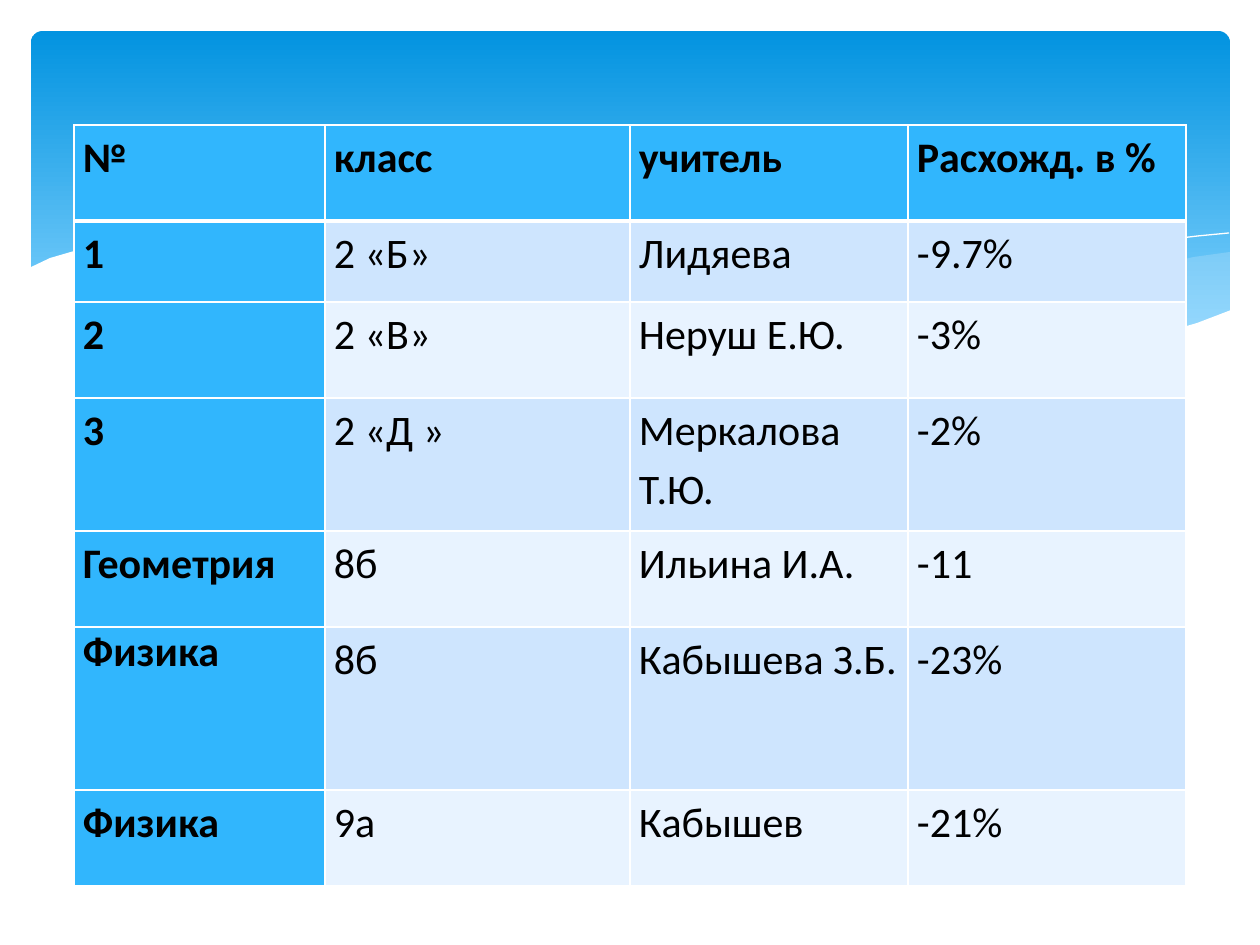
from lxml.etree import SubElement
from pptx import Presentation
from pptx.dml.color import RGBColor
from pptx.enum.shapes import MSO_SHAPE as SHAPE
from pptx.enum.text import PP_ALIGN as ALIGN
from pptx.oxml.ns import qn
from pptx.util import Pt

PX = 914400 / 126
WHITE, BLUE = "FFFFFF", "31B6FD"
BANDS = ["CEE5FE", "E8F3FF"]
rgb = RGBColor.from_string


def px(n):
    return round(n * PX)


def set_border(cell, side, width):
    ln = SubElement(cell._tc.get_or_add_tcPr(), qn(f"a:{side}"), w=str(Pt(width)))
    fill = SubElement(ln, qn("a:solidFill"))
    SubElement(fill, qn("a:srgbClr"), val=WHITE)


prs = Presentation()
prs.slide_width, prs.slide_height = px(1260), px(945)
s = prs.slides.add_slide(prs.slide_layouts[6])

# Gradient banner
banner = s.shapes.add_shape(SHAPE.ROUNDED_RECTANGLE, px(31), px(31), px(1199), px(340))
banner.adjustments[0] = 0.034
banner.shadow.inherit = False
banner.line.fill.background()
banner.fill.gradient()
banner.fill.gradient_angle = 270
for stop, (position, color) in zip(banner.fill.gradient_stops, [(0, "0293E0"), (0.9, "83D3FE")]):
    stop.position = position
    stop.color.rgb = rgb(color)

# Waves: fill colour (None for an open line), opacity in percent, points
waves = [
    ("C6E7FC", 29, [
        (1230, 252), (1194, 257), (1160, 265), (1123, 272), (1085, 281), (1014, 299),
        (949, 312), (890, 324), (833, 334), (871, 339), (922, 345), (969, 349),
        (1026, 350), (1076, 348), (1120, 343), (1160, 334), (1196, 324), (1230, 311)]),
    ("C6E7FC", 40, [
        (1125, 344), (1055, 334), (976, 320), (890, 302), (793, 280), (736, 266),
        (682, 256), (633, 247), (586, 241), (529, 236), (479, 233), (433, 234),
        (394, 237), (360, 241), (407, 247), (456, 256), (509, 266), (566, 280),
        (668, 302), (757, 321), (838, 335), (910, 345), (974, 349), (1043, 350),
        (1092, 348)]),
    (None, 100, [
        (389, 246), (413, 242), (457, 238), (524, 236), (591, 238), (672, 244),
        (733, 252), (801, 262), (876, 276), (958, 294), (1047, 316), (1143, 343)]),
    (None, 100, [
        (772, 324), (823, 310), (876, 296), (942, 281), (1016, 265), (1091, 251),
        (1147, 242), (1198, 236), (1229, 233)]),
    (WHITE, 100, [
        (1231, 310), (1197, 323), (1159, 334), (1118, 341), (1071, 347), (1019, 349),
        (959, 347), (892, 340), (816, 330), (730, 315), (634, 294), (563, 277),
        (493, 261), (428, 248), (368, 239), (315, 234), (266, 232), (203, 232),
        (150, 236), (107, 243), (74, 251), (50, 258), (29, 268), (29, 415), (1231, 415)]),
]
for color, opacity, points in waves:
    builder = s.shapes.build_freeform(*points[0], scale=PX)
    builder.add_line_segments(points[1:], close=color is not None)
    wave = builder.convert_to_shape()
    wave.shadow.inherit = False
    if color is None:
        wave.fill.background()
        wave.line.color.rgb = rgb(WHITE)
        wave.line.width = 0
        continue
    wave.line.fill.background()
    wave.fill.solid()
    wave.fill.fore_color.rgb = rgb(color)
    if opacity < 100:
        clr = wave.fill._xPr.find(qn("a:solidFill")).find(qn("a:srgbClr"))
        SubElement(clr, qn("a:alpha"), val=str(opacity * 1000))

# Table of discrepancies
rows = [
    ("№", "класс", "учитель", "Расхожд. в %"),
    ("1", "2 «Б»", "Лидяева", "-9.7%"),
    ("2", "2 «В»", "Неруш Е.Ю.", "-3%"),
    ("3", "2 «Д »", "Меркалова Т.Ю.", "-2%"),
    ("Геометрия", "8б", "Ильина И.А.", "-11"),
    ("Физика", "8б", "Кабышева З.Б.", "-23%"),
    ("Физика", "9а", "Кабышев", "-21%"),
]
widths = [251, 305, 278, 278]
heights = [96, 81, 96, 133, 96, 163, 96]
SINGLE_SPACED = (5, 0)
cell_format = {"margin_left": px(9), "margin_right": px(9), "margin_top": 0, "margin_bottom": 0}

table = s.shapes.add_table(len(rows), len(widths), px(74), px(125),
                           px(sum(widths)), px(sum(heights))).table
table.first_row = table.horz_banding = False
for column, width in zip(table.columns, widths):
    column.width = px(width)
for row, height in zip(table.rows, heights):
    row.height = px(height)

for i, values in enumerate(rows):
    for j, text in enumerate(values):
        cell = table.cell(i, j)
        heading = i == 0 or j == 0
        for name, value in cell_format.items():
            setattr(cell, name, value)
        for side in ("lnL", "lnR", "lnT", "lnB"):
            thick = (i, side) in [(0, "lnB"), (1, "lnT")]
            set_border(cell, side, 3 if thick else 1)
        cell.fill.solid()
        cell.fill.fore_color.rgb = rgb(BLUE if heading else BANDS[(i - 1) % 2])
        p = cell.text_frame.paragraphs[0]
        if (i, j) != SINGLE_SPACED:
            p.alignment, p.line_spacing = ALIGN.JUSTIFY, 1.15
        r = p.add_run()
        r.text = text
        for name, value in {"name": "Calibri", "size": Pt(24), "bold": heading}.items():
            setattr(r.font, name, value)
        r.font.color.rgb = rgb("000000")

prs.save("out.pptx")
